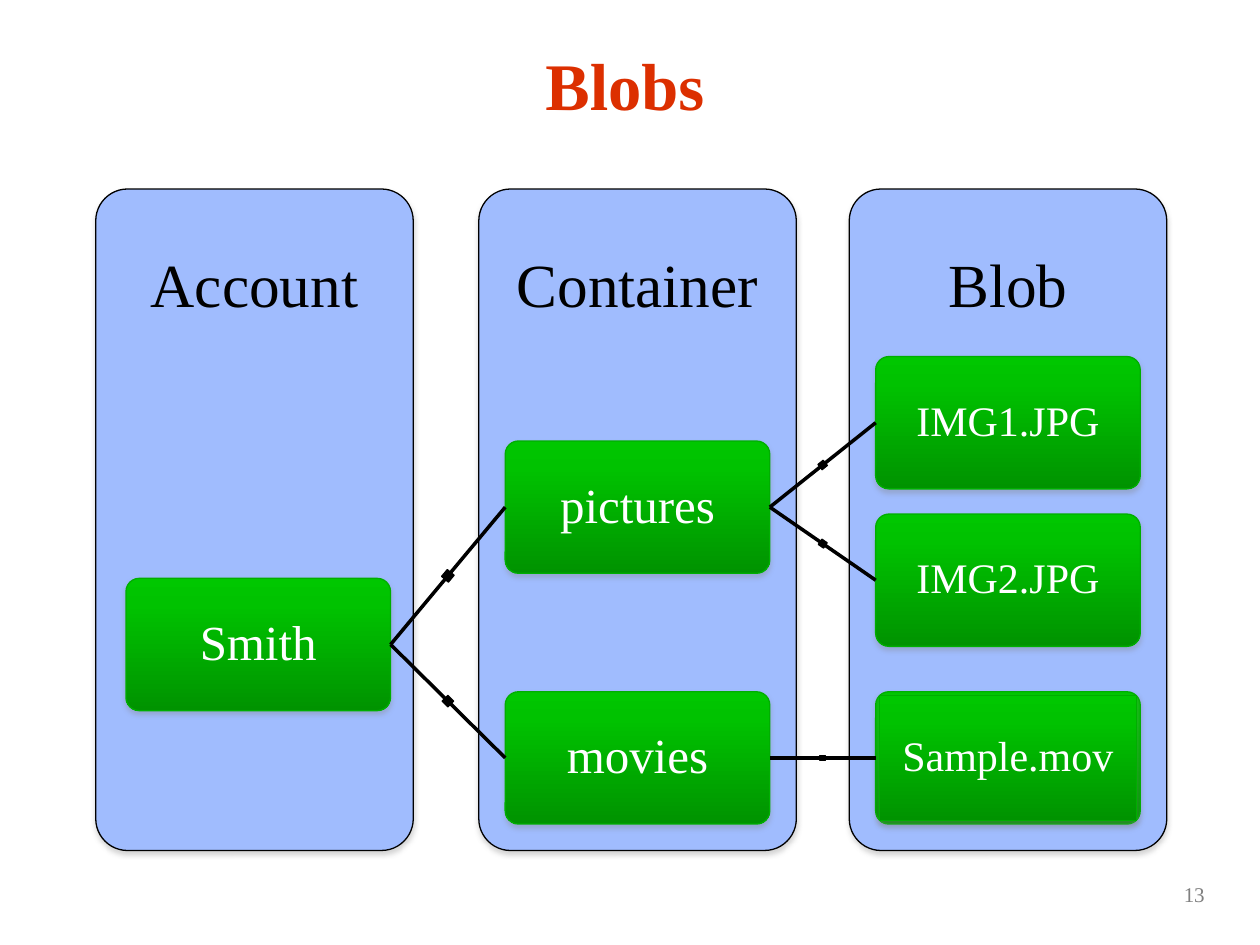
from copy import deepcopy
from math import atan2, degrees, hypot

from lxml.etree import SubElement as Sub
from pptx import Presentation
from pptx.dml.color import RGBColor
from pptx.enum.shapes import MSO_CONNECTOR as Conn, MSO_SHAPE as Shape
from pptx.enum.text import MSO_ANCHOR as Anchor, PP_ALIGN as Align
from pptx.oxml.ns import qn
from pptx.util import Inches, Pt

FONT = "Times New Roman"
BOX_W, BOX_H = 2.1, 1.05
PANEL_W, PANEL_H = 2.52, 5.25
TOP = 1.5
STOPS = ((0, "00C700"), (0.2, "00C200"), (1, "009300"))
LEFT_SITE, RIGHT_SITE = 1, 3

PANELS = (("Account", 0.76), ("Container", 3.8), ("Blob", 6.74))
BOXES = (  # text, left, top, size
    ("Smith", 1, 4.59, 28),
    ("pictures", 4.01, 3.5, 28),
    ("movies", 4.01, 5.49, 28),
    ("IMG1.JPG", 6.95, 2.83, 24),
    ("IMG2.JPG", 6.95, 4.08, 24),
    ("Sample.mov", 6.95, 5.49, 24),
)
LINKS = (
    ("Smith", "pictures"),
    ("Smith", "movies"),
    ("pictures", "IMG1.JPG"),
    ("pictures", "IMG2.JPG"),
    ("movies", "Sample.mov"),
)


def color(text):
    return RGBColor.from_string(text)


def inches(*sizes):
    return [Inches(size) for size in sizes]


def write(shape, text, size, ink, align=Align.CENTER, bold=False):
    frame = shape.text_frame
    frame.word_wrap = True
    frame.vertical_anchor = Anchor.MIDDLE
    para = frame.paragraphs[0]
    para.text = text
    para.alignment = align
    para.line_spacing = 0.9
    font = para.font
    font.name, font.size, font.bold = FONT, Pt(size), bold
    font.color.rgb = color(ink)
    return frame


def add_shade(shape):
    effects = Sub(shape._element.spPr, qn("a:effectLst"))
    shade = Sub(effects, qn("a:outerShdw"), blurRad=str(Pt(3.1)),
                dist=str(Pt(1.8)), dir="5400000", rotWithShape="0")
    tone = Sub(shade, qn("a:srgbClr"), val="808080")
    Sub(tone, qn("a:alpha"), val="35000")


def add_block(slide, kind, box, edge):
    shape = slide.shapes.add_shape(kind, *inches(*box))
    if kind == Shape.ROUNDED_RECTANGLE:
        shape.adjustments[0] = 0.1
    shape.line.color.rgb = color(edge)
    shape.line.width = Pt(0.75)
    add_shade(shape)
    return shape


def fill_green(shape):
    shape.fill.gradient()
    shape.fill.gradient_angle = 270
    first = shape._element.spPr.find(".//" + qn("a:gs"))
    first.addnext(deepcopy(first))
    for stop, (place, tone) in zip(shape.fill.gradient_stops, STOPS):
        stop.position = place
        stop.color.rgb = color(tone)


def add_title(slide, box):
    title = slide.shapes.title
    title.left, title.top, title.width, title.height = inches(*box)
    write(title, "Blobs", 38, "DC2F00", bold=True)


def add_panel(slide, label, left):
    panel = add_block(slide, Shape.ROUNDED_RECTANGLE,
                      (left, TOP, PANEL_W, PANEL_H), "000000")
    panel.fill.solid()
    panel.fill.fore_color.rgb = color("A0BCFE")
    # Heading, a little wider than the panel
    wide = 2.75
    head = slide.shapes.add_textbox(
        *inches(left - (wide - PANEL_W) / 2, TOP, wide, 1.57))
    write(head, label, 35, "000000")


def add_box(slide, label, left, top, size):
    box = add_block(slide, Shape.ROUNDED_RECTANGLE,
                    (left, top, BOX_W, BOX_H), "00AE00")
    fill_green(box)
    holder = box
    if label == "Sample.mov":  # this box has an inner plate
        gap = 0.03
        holder = add_block(
            slide, Shape.RECTANGLE,
            (left + gap, top + gap, BOX_W - 2 * gap, BOX_H - 2 * gap), "00AE00")
        fill_green(holder)
    write(holder, label, size, "FFFFFF")
    return box


def add_link(slide, start, end):
    line = slide.shapes.add_connector(Conn.STRAIGHT, 0, 0, 0, 0)
    line.begin_connect(start, RIGHT_SITE)
    line.end_connect(end, LEFT_SITE)
    line.line.color.rgb = color("000000")
    line.line.width = Pt(2)
    Sub(line._element.spPr, qn("a:effectLst"))
    # Square dot at the middle, turned along the line
    across, down = line.end_x - line.begin_x, line.end_y - line.begin_y
    side = int(hypot(across, down) * 0.05)
    dot = slide.shapes.add_shape(
        Shape.RECTANGLE, line.begin_x + (across - side) // 2,
        line.begin_y + (down - side) // 2, side, side)
    dot.rotation = degrees(atan2(down, across))
    dot.shadow.inherit = False
    dot.fill.solid()
    dot.fill.fore_color.rgb = dot.line.color.rgb = color("000000")
    dot.line.width = Pt(0.75)


def add_number(slide, box):
    number = slide.shapes.add_textbox(*inches(*box))
    frame = write(number, "13", 12, "808080", Align.RIGHT)
    frame.vertical_anchor = Anchor.TOP
    frame.paragraphs[0].line_spacing = 1


def main():
    deck = Presentation()
    deck.slide_width, deck.slide_height = inches(10, 7.5)
    slide = deck.slides.add_slide(deck.slide_layouts[5])
    add_title(slide, (0.25, 0.33, 9.42, 0.75))
    for panel in PANELS:
        add_panel(slide, *panel)
    boxes = {box[0]: add_box(slide, *box) for box in BOXES}
    for start, end in LINKS:
        add_link(slide, boxes[start], boxes[end])
    add_number(slide, (7.33, 6.95, 2.33, 0.4))
    deck.save("out.pptx")


if __name__ == "__main__":
    main()
